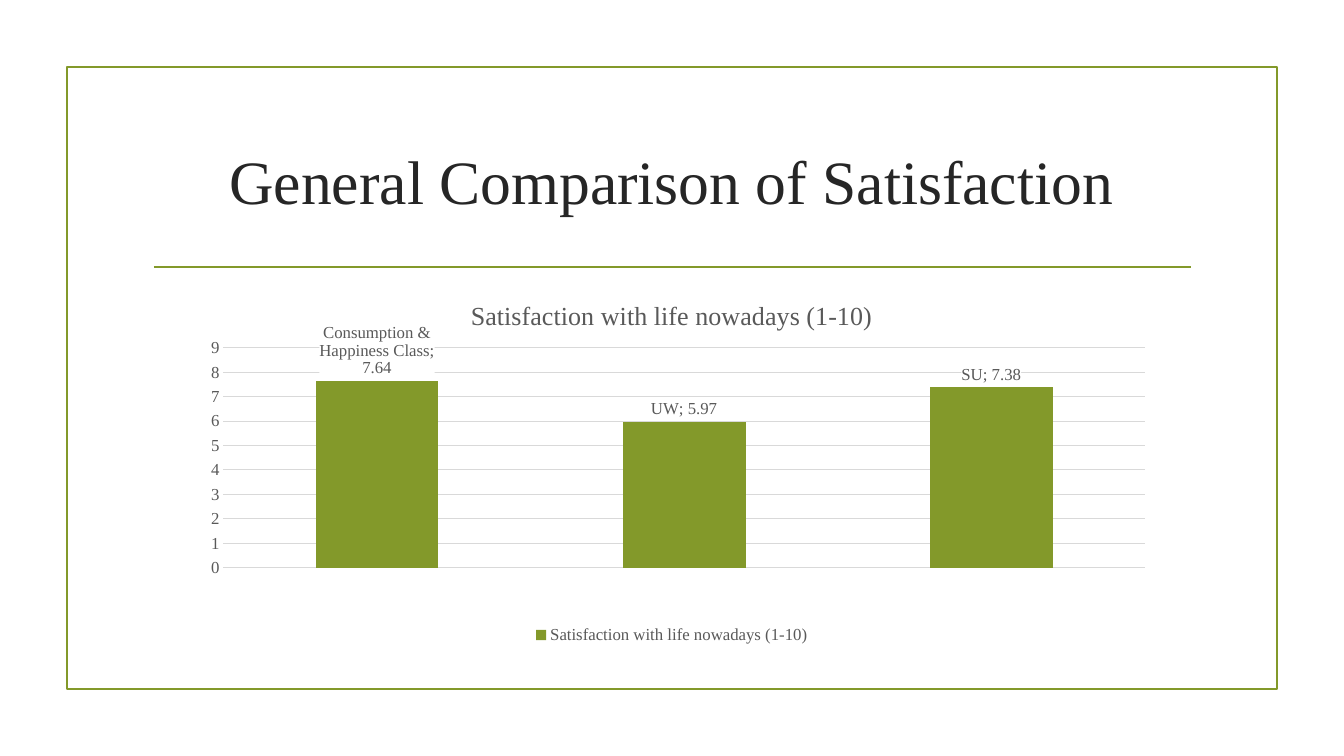
from lxml import etree
from pptx import Presentation
from pptx.chart.data import CategoryChartData
from pptx.dml.color import RGBColor
from pptx.enum.chart import (
    XL_CHART_TYPE as ChartType,
    XL_LABEL_POSITION as LabelPosition,
    XL_LEGEND_POSITION as LegendPosition,
    XL_TICK_MARK as TickMark,
)
from pptx.enum.shapes import MSO_CONNECTOR as Connector, MSO_SHAPE as Shape
from pptx.enum.text import MSO_ANCHOR as Anchor, PP_ALIGN as Align
from pptx.oxml import parse_xml
from pptx.oxml.ns import nsdecls, qn
from pptx.util import Emu, Pt

PX_PER_INCH = 100.8
FONT = "Times New Roman"
OLIVE = RGBColor(0x83, 0x99, 0x2A)
INK = RGBColor(0x26, 0x26, 0x26)
GREY = RGBColor(0x59, 0x59, 0x59)
GRID = RGBColor(0xD9, 0xD9, 0xD9)

MEASURE = "Satisfaction with life nowadays (1-10)"
SATISFACTION = {"Consumption & Happiness Class": 7.64, "UW": 5.97, "SU": 7.38}
PLOT_LAYOUT = {"x": 0.076, "y": 0.18, "w": 0.871, "h": 0.601}


def px(length):
    return Emu(round(length * 914400 / PX_PER_INCH))


def style_font(font, size, color):
    font.name = FONT
    font.size = Pt(size)
    font.bold = False
    font.color.rgb = color


def style_line(line, color, width):
    line.color.rgb = color
    line.width = Pt(width)


def add_frame(slide, left, top, width, height):
    frame = slide.shapes.add_shape(
        Shape.RECTANGLE, px(left), px(top), px(width), px(height))
    frame.shadow.inherit = False
    frame.fill.background()
    style_line(frame.line, OLIVE, 1.25)


def add_rule(slide, left, right, y):
    rule = slide.shapes.add_connector(
        Connector.STRAIGHT, px(left), px(y), px(right), px(y))
    style_line(rule.line, OLIVE, 1.25)
    etree.SubElement(rule._element.spPr, qn("a:effectLst"))


def add_title(slide, text, left, top, width, height):
    box = slide.shapes.add_textbox(px(left), px(top), px(width), px(height))
    frame = box.text_frame
    frame.word_wrap = True
    frame.vertical_anchor = Anchor.MIDDLE
    paragraph = frame.paragraphs[0]
    paragraph.alignment = Align.CENTER
    run = paragraph.add_run()
    run.text = text
    style_font(run.font, 44, INK)


def place_plot(chart):
    """Fix the inner plot area as fractions of the chart."""
    plot_area = chart._chartSpace.xpath("c:chart/c:plotArea")[0]
    for layout in plot_area.findall(qn("c:layout")):
        plot_area.remove(layout)
    modes = "".join(f'<c:{side}Mode val="edge"/>' for side in "xy")
    sizes = "".join(f'<c:{side} val="{value}"/>' for side, value in PLOT_LAYOUT.items())
    plot_area.insert(0, parse_xml(
        f'<c:layout {nsdecls("c")}><c:manualLayout><c:layoutTarget val="inner"/>'
        f"{modes}{sizes}</c:manualLayout></c:layout>"))


def label_columns(series):
    """Show category and value on white above each column."""
    labels = series.data_labels
    labels.show_category_name = True
    labels.show_value = True
    labels.position = LabelPosition.OUTSIDE_END
    style_font(labels.font, 12, GREY)
    element = labels._element
    element.find(qn("c:txPr")).addprevious(parse_xml(
        f'<c:spPr {nsdecls("c", "a")}><a:solidFill><a:srgbClr val="FFFFFF"/>'
        "</a:solidFill><a:ln><a:noFill/></a:ln></c:spPr>"))
    separator = parse_xml(f'<c:separator {nsdecls("c")}>; </c:separator>')
    flags = [child for child in element if child.tag.startswith(qn("c:show"))]
    last_flag = next(
        (flag for flag in flags if flag.tag == qn("c:showBubbleSize")), flags[-1])
    last_flag.addnext(separator)


def style_axes(chart):
    chart.category_axis.visible = False
    axis = chart.value_axis
    axis.minimum_scale, axis.maximum_scale, axis.major_unit = 0, 9, 1
    axis.major_tick_mark = axis.minor_tick_mark = TickMark.NONE
    axis.format.line.fill.background()
    style_line(axis.major_gridlines.format.line, GRID, 0.75)
    style_font(axis.tick_labels.font, 12, GREY)


def add_column_chart(slide, left, top, width, height):
    data = CategoryChartData()
    data.categories = list(SATISFACTION)
    data.add_series(MEASURE, list(SATISFACTION.values()))
    chart = slide.shapes.add_chart(
        ChartType.COLUMN_CLUSTERED,
        px(left), px(top), px(width), px(height), data).chart
    style_font(chart.font, 12, GREY)

    chart.has_title = True
    run = chart.chart_title.text_frame.paragraphs[0].add_run()
    run.text = MEASURE
    style_font(run.font, 18.6, GREY)

    chart.has_legend = True
    chart.legend.position = LegendPosition.BOTTOM
    chart.legend.include_in_layout = False
    style_font(chart.legend.font, 12, GREY)

    plot = chart.plots[0]
    plot.gap_width = 150
    plot.vary_by_categories = False
    series = plot.series[0]
    series.format.fill.solid()
    series.format.fill.fore_color.rgb = OLIVE
    label_columns(series)
    style_axes(chart)
    place_plot(chart)


def main():
    presentation = Presentation()
    presentation.slide_width = px(1344)
    presentation.slide_height = px(756)
    slide = presentation.slides.add_slide(presentation.slide_layouts[6])
    add_frame(slide, 67, 67, 1210, 622)
    add_rule(slide, 154, 1191, 267)
    add_title(slide, "General Comparison of Satisfaction", 143, 108, 1058, 144)
    add_column_chart(slide, 143, 282, 1058, 366)
    presentation.save("out.pptx")


if __name__ == "__main__":
    main()
